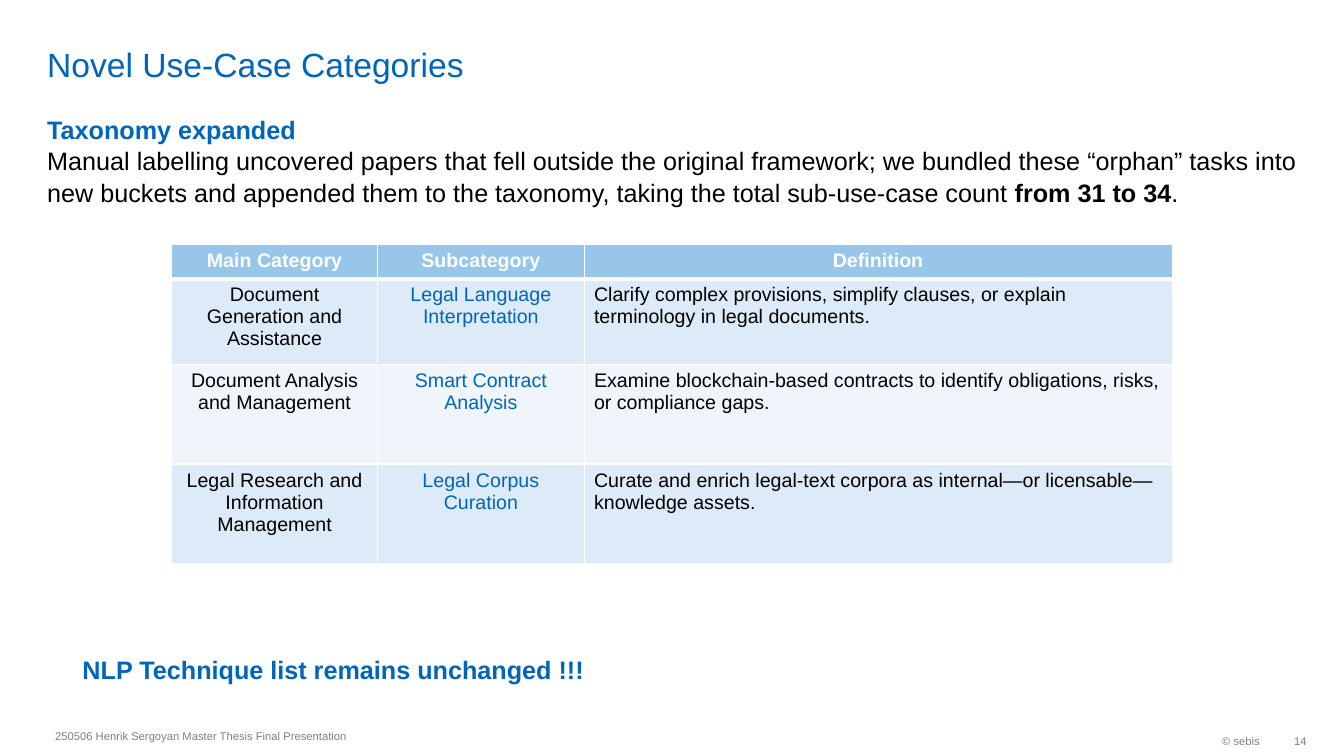
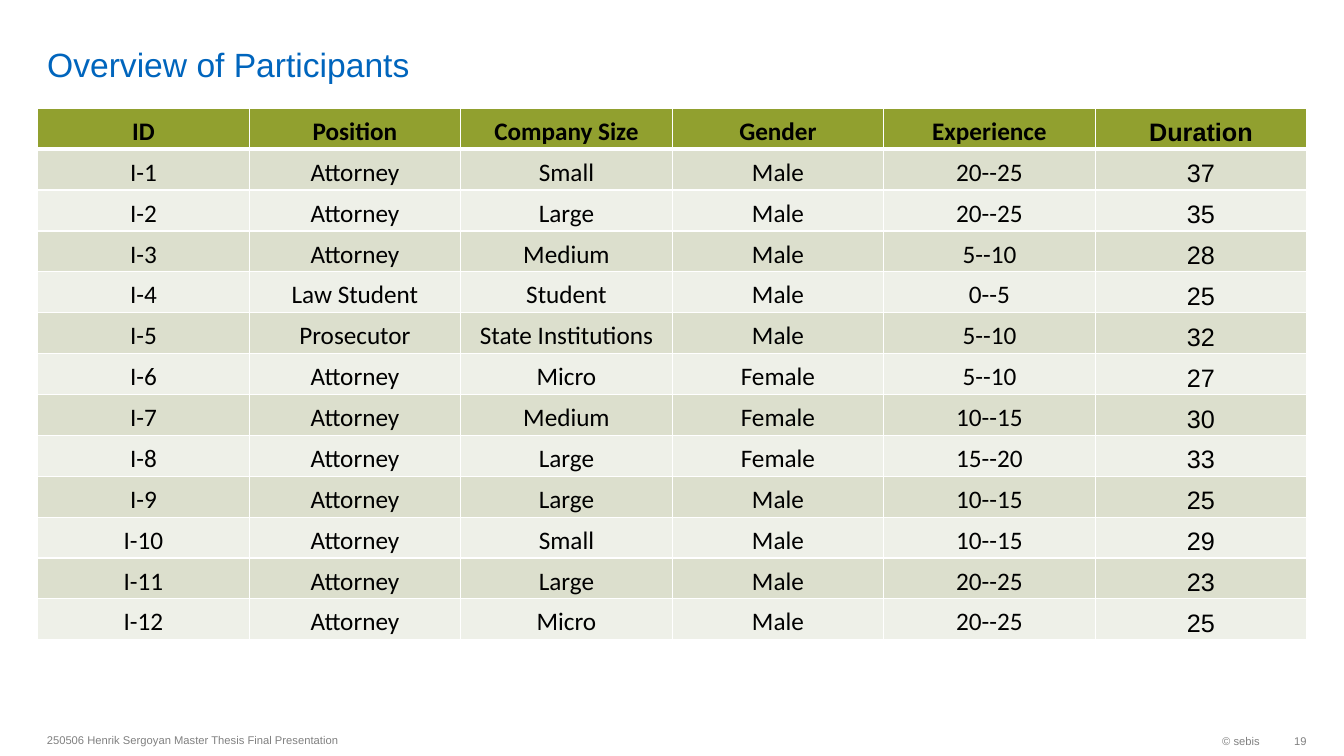
from pptx import Presentation
from pptx import util as u
from pptx.dml.color import RGBColor
from pptx.enum import text
from pptx.oxml import parse_xml
from pptx.oxml.ns import nsdecls

COLORS = {
    "blue": "0065BD", "black": "000000", "white": "FFFFFF", "gray": "808080",
    "sky": "98C6EA", "sky_mid": "DDEAF7", "sky_pale": "EFF5FB",
    "olive": "91A02F", "olive_mid": "DCDFCD", "olive_pale": "EEF0E8",
}
LEFT, CENTER, RIGHT = text.PP_ALIGN.LEFT, text.PP_ALIGN.CENTER, text.PP_ALIGN.RIGHT
TOP, MIDDLE, BOTTOM = text.MSO_ANCHOR.TOP, text.MSO_ANCHOR.MIDDLE, text.MSO_ANCHOR.BOTTOM
BOX_MARGINS = (0.25, 0.13, 0.25, 0.13)
TIGHT_MARGINS = (0.05, 0, 0.05, 0.05)


def write(frame, content, size=18, color="black", bold=False, font="Arial",
          align=LEFT, spacing=None):
    paragraph = frame.paragraphs[0]
    if paragraph.runs:
        paragraph = frame.add_paragraph()
    paragraph.alignment = align
    paragraph.line_spacing = spacing
    for index, part in enumerate(content.split("**")):
        run = paragraph.add_run()
        run.text = part
        run.font.size = u.Pt(size)
        run.font.name = font
        run.font.bold = bold or index % 2 == 1
        run.font.color.rgb = RGBColor.from_string(COLORS[color])


def add_box(slide, left, top, width, height, anchor=TOP, margins=BOX_MARGINS):
    box = slide.shapes.add_textbox(u.Cm(left), u.Cm(top), u.Cm(width), u.Cm(height))
    frame = box.text_frame
    frame.word_wrap = True
    frame.vertical_anchor = anchor
    (frame.margin_left, frame.margin_top,
     frame.margin_right, frame.margin_bottom) = map(u.Cm, margins)
    return frame


presentation = Presentation()
presentation.slide_width = u.Cm(33.87)
presentation.slide_height = u.Cm(19.05)

pages = [
    {
        "title": "Novel Use-Case Categories", "number": "14", "footer": (1.14, 18.14),
        "place": (4.32, 6.17), "columns": [5.2, 5.2, 14.82], "rows": [0.8, 2.16, 2.51, 2.51],
        "fills": ["sky", "sky_mid", "sky_pale"], "head_color": "white", "size": 14,
        "fonts": ["Arial"] * 3, "colors": ["black", "blue", "black"],
        "aligns": [CENTER, CENTER, LEFT], "anchor": TOP, "margins": BOX_MARGINS,
        "cells": [
            ["Main Category", "Subcategory", "Definition"],
            ["Document Generation and Assistance", "Legal Language Interpretation",
             "Clarify complex provisions, simplify clauses, or explain terminology in legal documents."],
            ["Document Analysis and Management", "Smart Contract Analysis",
             "Examine blockchain-based contracts to identify obligations, risks, or compliance gaps."],
            ["Legal Research and Information Management", "Legal Corpus Curation",
             "Curate and enrich legal-text corpora as internal—or licensable—knowledge assets."],
        ],
    },
    {
        "title": "Overview of Participants", "number": "19", "footer": (0.93, 18.25),
        "place": (0.95, 2.73), "columns": [5.33] * 6, "rows": [1.03] * 13,
        "fills": ["olive", "olive_mid", "olive_pale"], "head_color": "black", "size": 18,
        "fonts": ["Calibri"] * 5 + ["Arial"], "colors": ["black"] * 6,
        "aligns": [CENTER] * 6, "anchor": BOTTOM, "margins": TIGHT_MARGINS,
        "cells": [
            ["ID", "Position", "Company Size", "Gender", "Experience", "Duration"],
            ["I-1", "Attorney", "Small", "Male", "20--25", "37"],
            ["I-2", "Attorney", "Large", "Male", "20--25", "35"],
            ["I-3", "Attorney", "Medium", "Male", "5--10", "28"],
            ["I-4", "Law Student", "Student", "Male", "0--5", "25"],
            ["I-5", "Prosecutor", "State Institutions", "Male", "5--10", "32"],
            ["I-6", "Attorney", "Micro", "Female", "5--10", "27"],
            ["I-7", "Attorney", "Medium", "Female", "10--15", "30"],
            ["I-8", "Attorney", "Large", "Female", "15--20", "33"],
            ["I-9", "Attorney", "Large", "Male", "10--15", "25"],
            ["I-10", "Attorney", "Small", "Male", "10--15", "29"],
            ["I-11", "Attorney", "Large", "Male", "20--25", "23"],
            ["I-12", "Attorney", "Micro", "Male", "20--25", "25"],
        ],
    },
]

for page in pages:
    slide = presentation.slides.add_slide(presentation.slide_layouts[6])
    title = add_box(slide, 0.94, 0.13, 29.41, 2, BOTTOM, (0.25, 0, 0.25, 0))
    write(title, page["title"], size=24, color="blue")

    columns, rows = page["columns"], page["rows"]
    left, top = page["place"]
    table = slide.shapes.add_table(
        len(rows), len(columns), u.Cm(left), u.Cm(top), u.Cm(sum(columns)), u.Cm(sum(rows))
    ).table
    for column, width in zip(table.columns, columns):
        column.width = u.Cm(width)
    for row, height in zip(table.rows, rows):
        row.height = u.Cm(height)

    for row_index, values in enumerate(page["cells"]):
        is_head = row_index == 0
        head_fill, *band_fills = page["fills"]
        fill = head_fill if is_head else band_fills[(row_index - 1) % 2]
        edges = {"L": 1, "R": 1, "T": 3 if row_index == 1 else 1, "B": 3 if is_head else 1}
        for column_index, value in enumerate(values):
            cell = table.cell(row_index, column_index)
            properties = cell._tc.get_or_add_tcPr()
            for side, points in edges.items():
                properties.append(parse_xml(
                    f'<a:ln{side} {nsdecls("a")} w="{u.Pt(points)}"><a:solidFill>'
                    f'<a:srgbClr val="{COLORS["white"]}"/></a:solidFill></a:ln{side}>'
                ))
            cell.fill.solid()
            cell.fill.fore_color.rgb = RGBColor.from_string(COLORS[fill])
            cell.vertical_anchor = page["anchor"]
            (cell.margin_left, cell.margin_top,
             cell.margin_right, cell.margin_bottom) = map(u.Cm, page["margins"])
            write(cell.text_frame, value, size=page["size"], bold=is_head,
                  font=page["fonts"][column_index],
                  color=page["head_color"] if is_head else page["colors"][column_index],
                  align=CENTER if is_head else page["aligns"][column_index])

    footer = add_box(slide, *page["footer"], 16, 0.81, MIDDLE)
    write(footer, "250506 Henrik Sergoyan Master Thesis Final Presentation", size=8, color="gray")
    copyright_line = add_box(slide, 26.06, 18.26, 5.94, 0.81, MIDDLE)
    write(copyright_line, "© sebis", size=8, color="gray", align=RIGHT)
    page_number = add_box(slide, 32, 18.26, 0.93, 0.81, MIDDLE, (0.25, 0.13, 0, 0.13))
    write(page_number, page["number"], size=8, color="gray", align=RIGHT)

taxonomy_slide = presentation.slides[0]
summary = add_box(taxonomy_slide, 0.94, 2.72, 32.1, 3.2)
write(summary, "Taxonomy expanded", color="blue", bold=True, spacing=1.04)
write(summary, "Manual labelling uncovered papers that fell outside the original framework; "
      "we bundled these “orphan” tasks into new buckets and appended them to the taxonomy, "
      "taking the total sub-use-case count **from 31 to 34**.", spacing=1.04)
conclusion = add_box(taxonomy_slide, 1.83, 16.35, 27.6, 1.8)
write(conclusion, "NLP Technique list remains unchanged !!!", color="blue", bold=True)

presentation.save("out.pptx")
